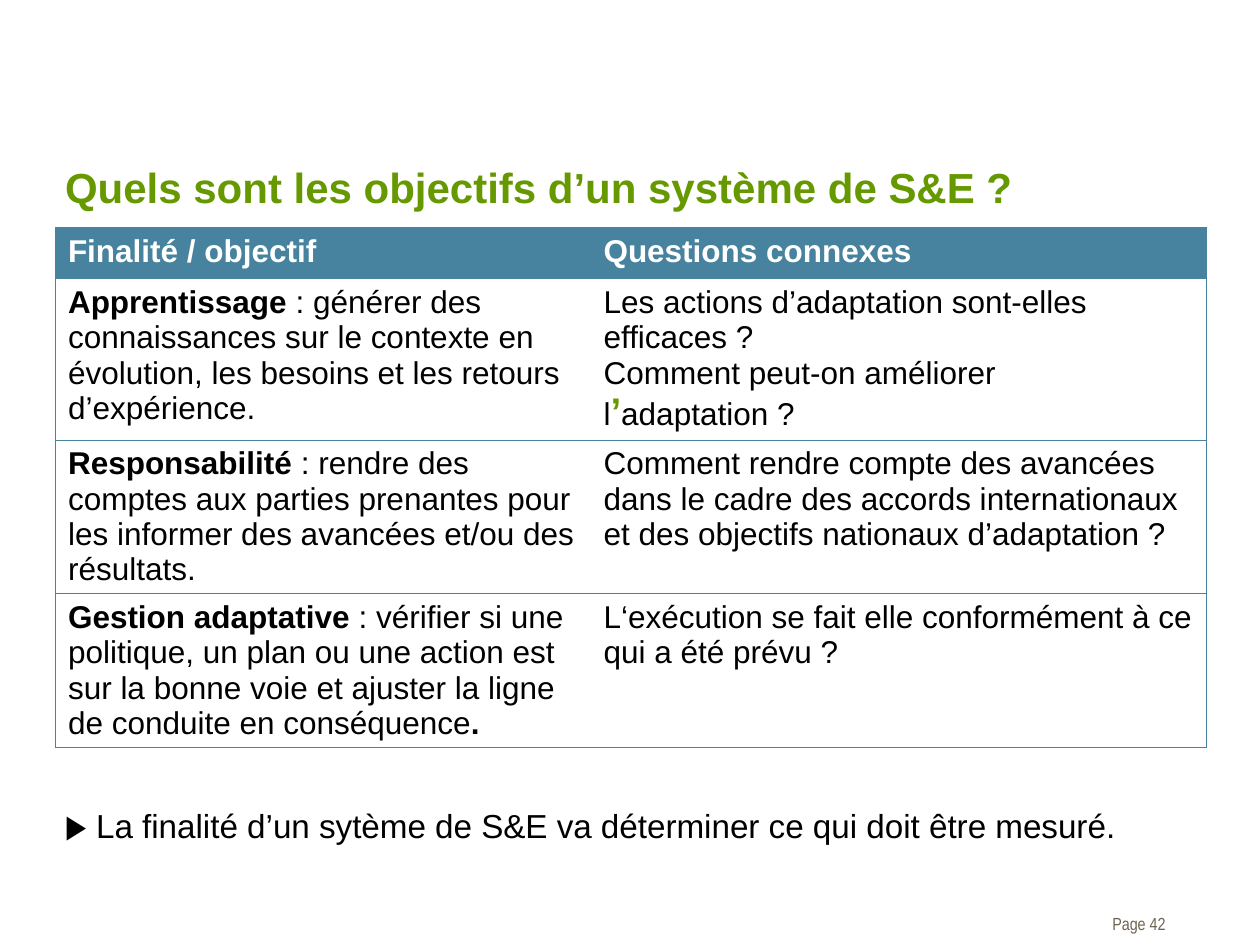
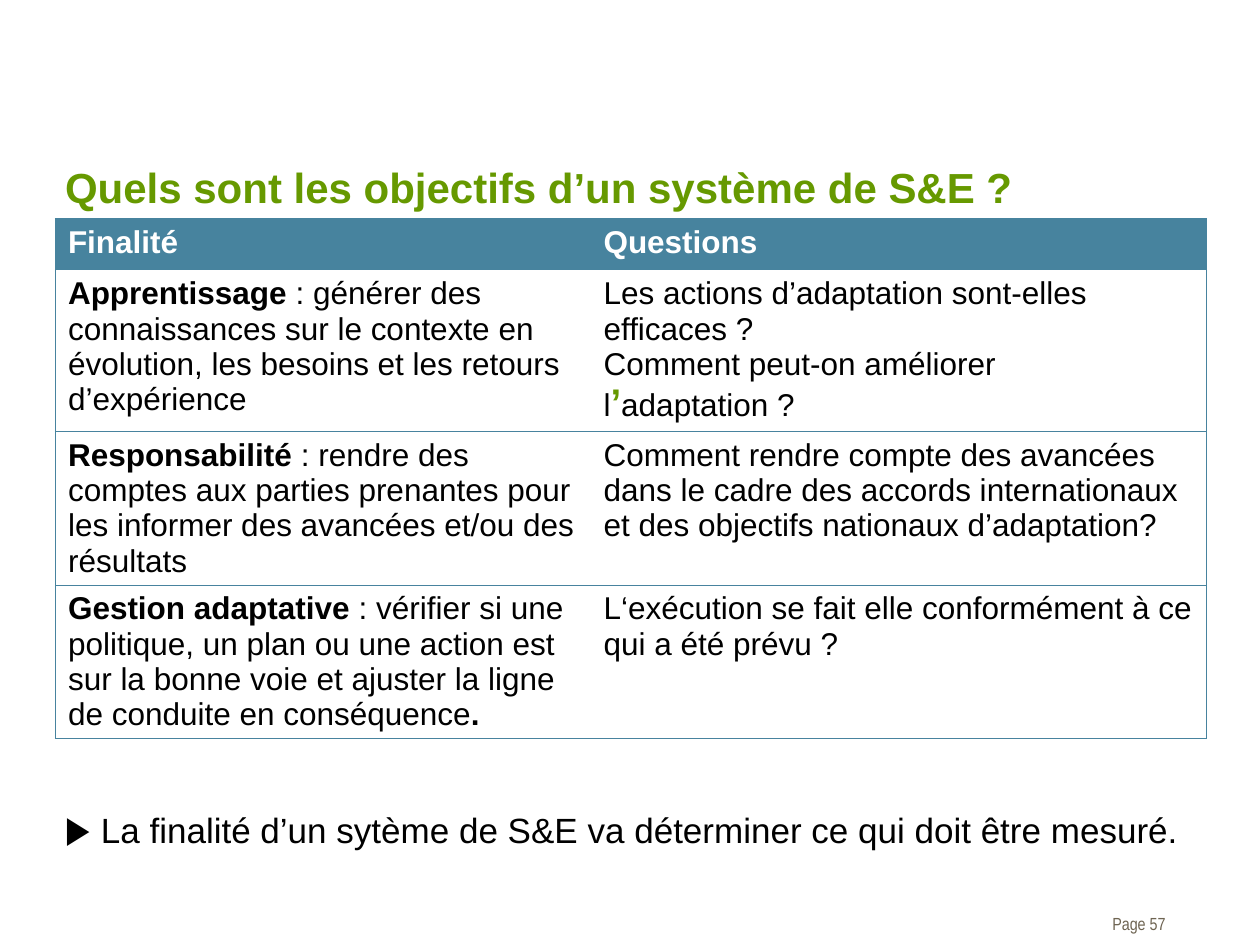
from pptx import Presentation
from pptx.dml.color import RGBColor
from pptx.enum import text as txt
from pptx.oxml import parse_xml
from pptx.oxml.ns import nsdecls
from pptx.util import Pt

GREEN = RGBColor(0x66, 0x99, 0x00)
BLUE = RGBColor(0x47, 0x83, 0x9E)
TAUPE = RGBColor(0x6E, 0x64, 0x52)
BLACK = RGBColor(0, 0, 0)
WHITE = RGBColor(255, 255, 255)

TITLE = "Quels sont les objectifs d’un système de S&E ?"
CONCLUSION = "La finalité d’un sytème de S&E va déterminer ce qui doit être mesuré."
COLUMN_WIDTHS = (306, 352)
ROW_HEIGHTS = (29.2, 92.3, 87.8, 87.8)
BOLD = {"bold": True}
ACCENT = {"bold": True, "size": 22, "color": GREEN}


def write(frame, *paragraphs, size=18, color=BLACK, bold=False, font="Arial",
          align=txt.PP_ALIGN.LEFT, anchor=txt.MSO_ANCHOR.TOP):
    frame.word_wrap = True
    frame.vertical_anchor = anchor
    for index, runs in enumerate(paragraphs):
        paragraph = frame.add_paragraph() if index else frame.paragraphs[0]
        paragraph.alignment = align
        for words, changes in runs:
            style = {"size": size, "color": color, "bold": bold, **changes}
            run = paragraph.add_run()
            run.text = words
            run.font.name = font
            run.font.size = Pt(style["size"])
            run.font.bold = style["bold"]
            run.font.color.rgb = style["color"]


def plain(words):
    return [(words, {})]


def set_borders(cell, visible):
    properties = cell._tc.get_or_add_tcPr()
    for side in "LRTB":
        paint = (f'<a:solidFill><a:srgbClr val="{BLUE}"/></a:solidFill>'
                 if side in visible else "<a:noFill/>")
        properties.append(parse_xml(
            f'<a:ln{side} {nsdecls("a")} w="{Pt(0.75)}">{paint}</a:ln{side}>'))


def add_title(slide, left, top, width, height):
    title = slide.shapes.title
    title.left, title.top, title.width, title.height = map(Pt, (left, top, width, height))
    write(title.text_frame, plain(TITLE), size=24, color=GREEN, bold=True,
          anchor=txt.MSO_ANCHOR.MIDDLE)


def add_text(slide, left, top, width, height, runs, **style):
    box = slide.shapes.add_textbox(*map(Pt, (left, top, width, height)))
    write(box.text_frame, runs, **style)
    return box


def objective_rows(headings, stop, question_end):
    return [
        [[plain(heading)] for heading in headings],
        [[[("Apprentissage", BOLD),
           (" : générer des connaissances sur le contexte en évolution, "
            "les besoins et les retours d’expérience" + stop, {})]],
         [plain("Les actions d’adaptation sont-elles efficaces ?"),
          [("Comment peut-on améliorer l", {}), ("’", ACCENT), ("adaptation ?", {})]]],
        [[[("Responsabilité", BOLD),
           (" : rendre des comptes aux parties prenantes pour les informer "
            "des avancées et/ou des résultats" + stop, {})]],
         [plain("Comment rendre compte des avancées dans le cadre des accords "
                "internationaux et des objectifs nationaux d’adaptation" + question_end)]],
        [[[("Gestion adaptative ", BOLD),
           (": vérifier si une politique, un plan ou une action est sur la bonne voie "
            "et ajuster la ligne de conduite en conséquence", {}), (".", BOLD)]],
         [plain("L‘exécution se fait elle conformément à ce qui a été prévu ?")]],
    ]


def add_objectives(slide, left, top, rows):
    size = (sum(COLUMN_WIDTHS), sum(ROW_HEIGHTS))
    frame = slide.shapes.add_table(len(rows), len(COLUMN_WIDTHS),
                                   *map(Pt, (left, top, *size)))
    table = frame.table
    table.horz_banding = False
    for column, width in zip(table.columns, COLUMN_WIDTHS):
        column.width = Pt(width)
    for row, height in zip(table.rows, ROW_HEIGHTS):
        row.height = Pt(height)
    for r, row in enumerate(rows):
        for c, paragraphs in enumerate(row):
            cell = table.cell(r, c)
            set_borders(cell, "TB" + "LR"[c])
            cell.fill.solid()
            cell.fill.fore_color.rgb = WHITE if r else BLUE
            write(cell.text_frame, *paragraphs, color=BLACK if r else WHITE, bold=r == 0)
    table.cell(1, 1).margin_right = Pt(24)


def add_objectives_slide(deck, page, table_top, rows, conclusion, conclusion_height):
    slide = deck.slides.add_slide(deck.slide_layouts[5])
    add_title(slide, 30, 88, 592.5, 37.5)
    add_objectives(slide, 31.7, table_top, rows)
    add_text(slide, 30, 456.5, 659.5, conclusion_height, conclusion, size=19)
    footer = add_text(slide, 593.3, 518.4, 72.7, 19.4, plain(f"Page {page}"), size=10,
                      color=TAUPE, font="Arial Narrow", align=txt.PP_ALIGN.RIGHT)
    footer.text_frame.margin_right = 0


def main():
    deck = Presentation()
    deck.slide_width, deck.slide_height = Pt(720), Pt(540)
    add_objectives_slide(
        deck, 42, 130, objective_rows(("Finalité / objectif", "Questions connexes"), ".", " ?"),
        plain("▶ " + CONCLUSION), 30)
    add_objectives_slide(
        deck, 57, 125, objective_rows(("Finalité", "Questions"), "", "?"),
        [("▶ ", {"size": 22}), (CONCLUSION, {"size": 20})], 34)
    deck.save("out.pptx")


if __name__ == "__main__":
    main()
